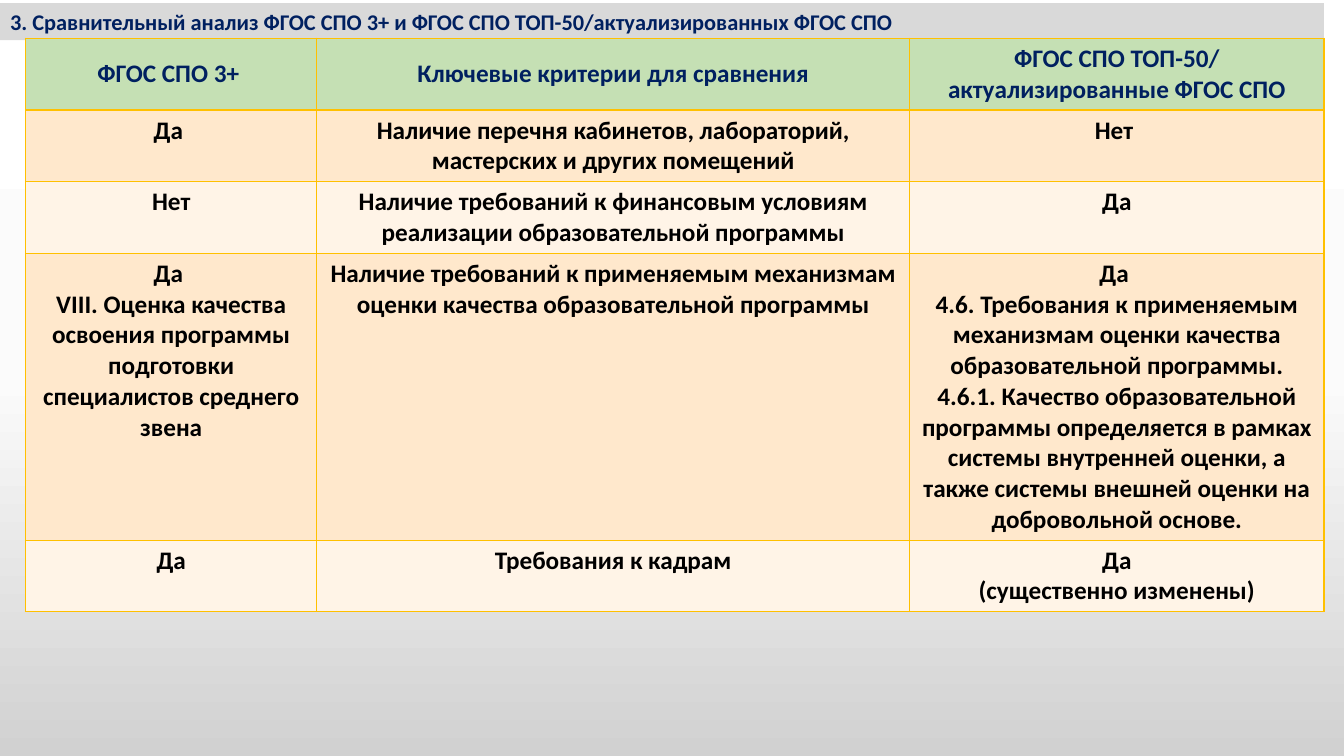
from copy import deepcopy
from dataclasses import dataclass

from lxml.etree import SubElement
from pptx import Presentation
from pptx.dml.color import RGBColor
from pptx.enum.text import MSO_ANCHOR, MSO_AUTO_SIZE, PP_ALIGN
from pptx.oxml.ns import qn
from pptx.util import Inches, Pt


@dataclass(frozen=True)
class Theme:
    font: str = "Calibri"
    title_size: int = 16
    table_size: int = 18
    heading: str = "002060"
    body: str = "000000"
    bar: str = "D9D9D9"
    header_fill: str = "C5E0B4"
    bands: tuple = ("FFE8CC", "FFF4E7")
    border: str = "FFC000"
    border_width: float = 1
    background: tuple = ("FFFFFF", "FBFBFB", "D1D1D1")


class SlideBuilder:
    """Places styled elements; lengths are percentages of the slide size."""

    def __init__(self, presentation, theme):
        self.theme = theme
        self.width = presentation.slide_width
        self.height = presentation.slide_height
        self.slide = presentation.slides.add_slide(presentation.slide_layouts[5])

    def across(self, share):
        return round(self.width * share / 100)

    def down(self, share):
        return round(self.height * share / 100)

    def style_paragraphs(self, text_frame, size, color, alignment):
        for paragraph in text_frame.paragraphs:
            paragraph.alignment = alignment
            for run in paragraph.runs:
                run.font.name = self.theme.font
                run.font.size = Pt(size)
                run.font.bold = True
                run.font.color.rgb = RGBColor.from_string(color)

    def add_background(self):
        fill = self.slide.background.fill
        fill.gradient()
        fill.gradient_angle = 270
        stop_list = next(self.slide.element.iter(qn("a:gsLst")))
        stop_list.insert(1, deepcopy(stop_list[0]))
        colors = self.theme.background
        for index, (stop, color) in enumerate(zip(fill.gradient_stops, colors)):
            stop.position = index / (len(colors) - 1)
            stop.color.rgb = RGBColor.from_string(color)

    def add_title(self, text, left, top, width, height):
        title = self.slide.shapes.title
        title.left, title.top = self.across(left), self.down(top)
        title.width, title.height = self.across(width), self.down(height)
        title.fill.solid()
        title.fill.fore_color.rgb = RGBColor.from_string(self.theme.bar)
        text_frame = title.text_frame
        text_frame.text = text
        text_frame.word_wrap = True
        text_frame.auto_size = MSO_AUTO_SIZE.NONE
        text_frame.vertical_anchor = MSO_ANCHOR.MIDDLE
        self.style_paragraphs(text_frame, self.theme.title_size,
                              self.theme.heading, PP_ALIGN.LEFT)

    def add_borders(self, cell):
        properties = cell._tc.get_or_add_tcPr()
        for side in ("a:lnL", "a:lnR", "a:lnT", "a:lnB"):
            line = SubElement(properties, qn(side), w=str(Pt(self.theme.border_width)))
            solid = SubElement(line, qn("a:solidFill"))
            SubElement(solid, qn("a:srgbClr"), val=self.theme.border)

    def add_table(self, rows, left, top, columns, heights):
        frame = self.slide.shapes.add_table(
            len(rows), len(columns), self.across(left), self.down(top),
            self.across(sum(columns)), self.down(sum(heights)))
        table = frame.table
        table.first_row = table.horz_banding = False
        for column, width in zip(table.columns, columns):
            column.width = self.across(width)
        for index, (row, height) in enumerate(zip(table.rows, heights)):
            row.height = self.down(height)
            for cell, text in zip(row.cells, rows[index]):
                self.fill_cell(cell, text, index)

    def fill_cell(self, cell, text, row_index):
        theme = self.theme
        is_header = row_index == 0
        fill = theme.header_fill if is_header else theme.bands[(row_index - 1) % 2]
        self.add_borders(cell)
        cell.fill.solid()
        cell.fill.fore_color.rgb = RGBColor.from_string(fill)
        cell.vertical_anchor = MSO_ANCHOR.MIDDLE if is_header else MSO_ANCHOR.TOP
        cell.text_frame.text = text
        self.style_paragraphs(cell.text_frame, theme.table_size,
                              theme.heading if is_header else theme.body,
                              PP_ALIGN.CENTER)


COMPARISON = [
    ("ФГОС СПО 3+ ", "Ключевые критерии для сравнения",
     "ФГОС СПО ТОП-50/\nактуализированные ФГОС СПО"),
    ("Да ", "Наличие перечня кабинетов, лабораторий, мастерских и других помещений",
     "Нет "),
    ("Нет", "Наличие требований к финансовым условиям реализации "
     "образовательной программы", "Да"),
    ("Да \nVIII. Оценка качества освоения программы подготовки "
     "специалистов среднего звена",
     "Наличие требований к применяемым механизмам оценки качества "
     "образовательной программы",
     "Да \n4.6. Требования к применяемым механизмам оценки качества "
     "образовательной программы.\n"
     "4.6.1. Качество образовательной программы определяется в рамках системы "
     "внутренней оценки, а также системы внешней оценки на добровольной основе."),
    ("Да", "Требования к кадрам", "Да\n(существенно изменены)"),
]


def main():
    presentation = Presentation()
    presentation.slide_width = Inches(13.33)
    presentation.slide_height = Inches(7.5)
    builder = SlideBuilder(presentation, Theme())

    # Background and title bar
    builder.add_background()
    builder.add_title(
        "3. Сравнительный анализ ФГОС СПО 3+ и ФГОС СПО ТОП-50/актуализированных ФГОС СПО",
        left=0, top=0.4, width=98.5, height=4.93)

    # Comparison table: the fourth row is four times as tall as the others
    row_height = 9.33
    builder.add_table(
        COMPARISON, left=1.9, top=5.07, columns=(21.68, 44.11, 30.83),
        heights=[row_height * units for units in (1, 1, 1, 4, 1)])

    presentation.save("out.pptx")


if __name__ == "__main__":
    main()
